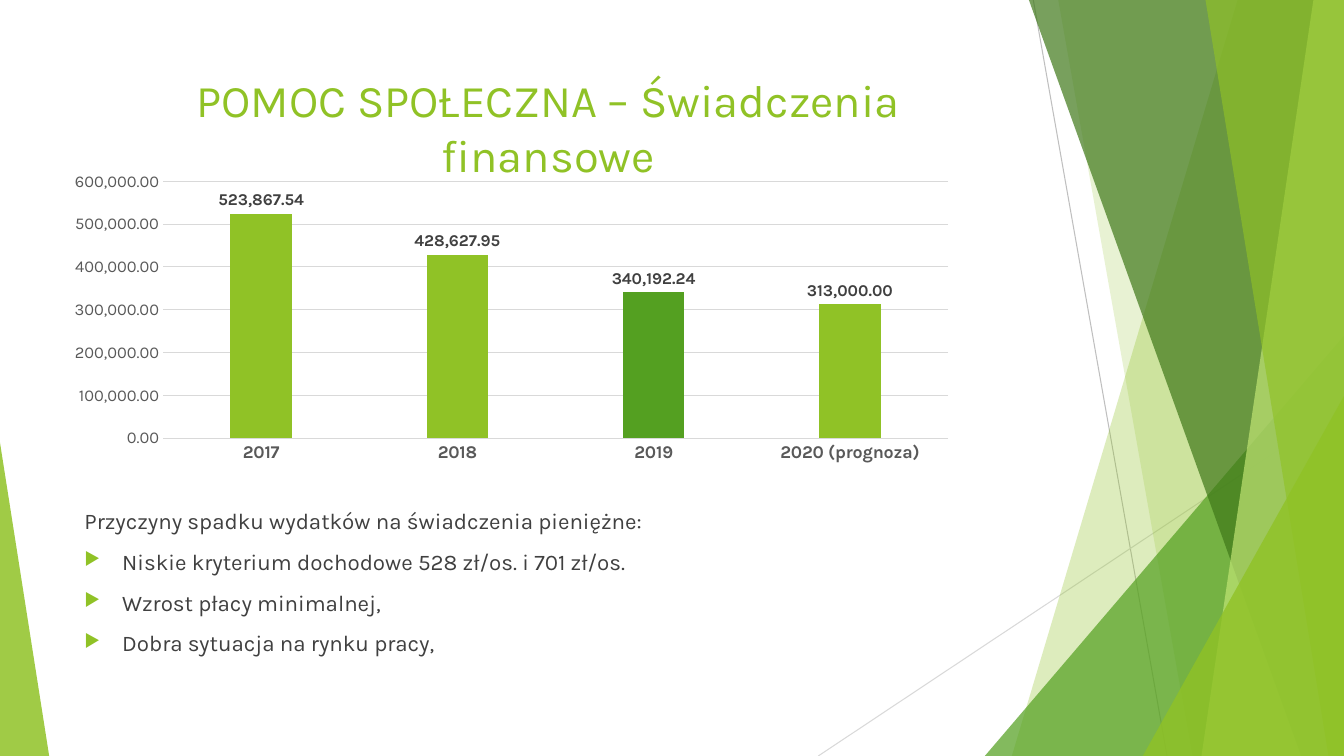
"""Build the slide on social assistance cash benefits with its column chart."""
from dataclasses import dataclass

from lxml import etree
from pptx import Presentation
from pptx import util as u
from pptx.chart import data as chart_data
from pptx.dml import color
from pptx.enum import chart as chart_enum
from pptx.enum import shapes, text
from pptx.oxml import ns, parse_xml

FONT = "Karla"
GREEN, DARK_GREEN, GRID = "90C226", "54A021", "D9D9D9"
WIDTH, HEIGHT = 33.87, 19.05


@dataclass
class Ray:
    """A thin straight line behind the facets, in centimetres."""
    start: tuple[float, float]
    end: tuple[float, float]
    tint: str


@dataclass
class Band:
    """A full-height facet reaching the right edge of the slide."""
    top_x: float
    bottom_x: float
    tint: str
    opacity: int


@dataclass
class Corner:
    """A right triangle standing on the bottom edge of the slide."""
    left: float
    top: float
    width: float
    apex: int
    tint: str
    opacity: int


RAYS = [
    Ray((26.04, 0), (29.41, HEIGHT), "BFBFBF"),
    Ray((WIDTH, 10.24), (20.62, HEIGHT), GRID),
]
FACETS = [
    Band(31.19, 25.5, GREEN, 30),
    Band(26.67, 30.05, GREEN, 20),
    Corner(24.82, 8.46, 9.05, 1, DARK_GREEN, 72),
    Band(25.93, 32.79, "3F7819", 70),
    Band(33.1, 30.28, "C0E474", 70),
    Band(30.38, 33.48, GREEN, 65),
    Corner(28.8, 9.98, 5.07, 1, GREEN, 80),
    Corner(0, 11.15, 1.24, 0, GREEN, 85),
]
TITLE = "POMOC SPOŁECZNA – Świadczenia finansowe"
INTRO = "Przyczyny spadku wydatków na świadczenia pieniężne:"
REASONS = [
    "Niskie kryterium dochodowe 528 zł/os. i 701 zł/os.",
    "Wzrost płacy minimalnej,",
    "Dobra sytuacja na rynku pracy,",
]
SPENDING = {
    "2017": 523867.54,
    "2018": 428627.95,
    "2019": 340192.24,
    "2020 (prognoza)": 313000,
}


def rgb(value: str) -> color.RGBColor:
    """Turn a hex string into a colour."""
    return color.RGBColor.from_string(value)


def style_font(font, size: float, tint: str, bold: bool = False) -> None:
    """Set the face, size, colour and weight of a font."""
    font.name, font.size, font.bold = FONT, u.Pt(size), bold
    font.color.rgb = rgb(tint)


def style_line(line, tint: str) -> None:
    """Give a line its colour and the common hairline width."""
    line.color.rgb = rgb(tint)
    line.width = u.Pt(0.75)


def draw_ray(slide, ray: Ray) -> None:
    """Draw one straight line without shadow."""
    ends = [u.Cm(value) for value in (*ray.start, *ray.end)]
    line = slide.shapes.add_connector(shapes.MSO_CONNECTOR.STRAIGHT, *ends)
    style_line(line.line, ray.tint)
    etree.SubElement(line._element.spPr, ns.qn("a:effectLst"))


def draw_facet(slide, facet: Band | Corner) -> None:
    """Draw one translucent facet."""
    if isinstance(facet, Band):
        points = [(facet.top_x, 0), (WIDTH, 0), (WIDTH, HEIGHT), (facet.bottom_x, HEIGHT)]
        corners = [(u.Cm(x), u.Cm(y)) for x, y in points]
        builder = slide.shapes.build_freeform(*corners[0])
        builder.add_line_segments(corners[1:], close=True)
        shape = builder.convert_to_shape()
    else:
        shape = slide.shapes.add_shape(
            shapes.MSO_SHAPE.ISOSCELES_TRIANGLE, u.Cm(facet.left), u.Cm(facet.top),
            u.Cm(facet.width), u.Cm(HEIGHT - facet.top))
        shape.adjustments[0] = facet.apex
    shape.shadow.inherit = False
    shape.line.fill.background()
    shape.fill.solid()
    shape.fill.fore_color.rgb = rgb(facet.tint)
    tint = shape._element.spPr.find(ns.qn("a:solidFill"))[0]
    etree.SubElement(tint, ns.qn("a:alpha"), val=str(facet.opacity * 1000))


def add_span(para, wording: str, size: float, tint: str) -> None:
    """Append one formatted run to a paragraph."""
    span = para.add_run()
    span.text = wording
    style_font(span.font, size, tint)


def add_bullet(para) -> None:
    """Give a paragraph a hanging green arrow bullet."""
    props = para._p.get_or_add_pPr()
    props.set("marL", str(u.Cm(0.95)))
    props.set("indent", str(-u.Cm(0.95)))
    tint = etree.SubElement(props, ns.qn("a:buClr"))
    etree.SubElement(tint, ns.qn("a:srgbClr"), val=GREEN)
    etree.SubElement(props, ns.qn("a:buSzPct"), val="80000")
    etree.SubElement(props, ns.qn("a:buChar"), char="▶")


def fill_title(title) -> None:
    """Place and write the slide title."""
    title.left, title.top, title.width, title.height = map(u.Cm, (1.88, 1.7, 23.88, 2.16))
    frame = title.text_frame
    frame.auto_size = text.MSO_AUTO_SIZE.NONE
    frame.word_wrap = True
    frame.vertical_anchor = text.MSO_ANCHOR.TOP
    frame.margin_left = frame.margin_right = u.Cm(0.8)
    para = frame.paragraphs[0]
    para.alignment = text.PP_ALIGN.CENTER
    add_span(para, TITLE, 32.4, GREEN)


def add_reasons(slide) -> None:
    """Write the introduction and the bulleted reasons."""
    box = slide.shapes.add_textbox(*map(u.Cm, (1.88, 12.65, 21.97, 4.7)))
    frame = box.text_frame
    frame.word_wrap = True
    for index, wording in enumerate([INTRO, *REASONS]):
        para = frame.add_paragraph() if index else frame.paragraphs[0]
        para.space_before = u.Pt(10)
        if index:
            add_bullet(para)
        add_span(para, wording, 16, "404040")


def add_spending_chart(slide) -> None:
    """Chart the yearly spending with 2019 highlighted."""
    figures = chart_data.CategoryChartData(number_format="#,##0.00")
    figures.categories = list(SPENDING)
    figures.add_series("Series 1", list(SPENDING.values()))
    chart = slide.shapes.add_chart(
        chart_enum.XL_CHART_TYPE.COLUMN_CLUSTERED,
        *map(u.Cm, (1.88, 4.32, 22.68, 7.8)), figures).chart
    chart.has_legend = chart.has_title = False
    style_font(chart.font, 10, "000000")

    plot = chart.plots[0]
    plot.gap_width, plot.overlap, plot.vary_by_categories = 219, -27, False
    series = plot.series[0]
    for fill, tint in ((series.format.fill, GREEN), (series.points[2].format.fill, DARK_GREEN)):
        fill.solid()
        fill.fore_color.rgb = rgb(tint)
    labels = series.data_labels
    labels.show_value = True
    labels.position = chart_enum.XL_LABEL_POSITION.OUTSIDE_END
    labels.number_format, labels.number_format_is_linked = "#,##0.00", False
    style_font(labels.font, 12, "404040", True)

    years, amounts = chart.category_axis, chart.value_axis
    for axis, size in ((years, 13), (amounts, 12)):
        axis.major_tick_mark = axis.minor_tick_mark = chart_enum.XL_TICK_MARK.NONE
        style_font(axis.tick_labels.font, size, "595959", axis is years)
    style_line(years.format.line, GRID)
    style_line(amounts.major_gridlines.format.line, GRID)
    amounts.format.line.fill.background()
    amounts.minimum_scale, amounts.maximum_scale, amounts.major_unit = 0, 600000, 100000
    amounts.tick_labels.number_format = "#,##0.00"
    amounts.tick_labels.number_format_is_linked = False

    area = chart._chartSpace.chart.plotArea
    for old in area.findall(ns.qn("c:layout")):
        area.remove(old)
    settings = {"layoutTarget": "inner", "xMode": "edge", "yMode": "edge",
                "x": 0.08, "y": 0.02, "w": 0.89, "h": 0.84}
    parts = "".join(f'<c:{name} val="{value}"/>' for name, value in settings.items())
    area.insert(0, parse_xml(
        f'<c:layout {ns.nsdecls("c")}><c:manualLayout>{parts}</c:manualLayout></c:layout>'))


def main() -> None:
    """Assemble and save the deck."""
    deck = Presentation()
    deck.slide_width, deck.slide_height = u.Cm(WIDTH), u.Cm(HEIGHT)
    page = deck.slides.add_slide(deck.slide_layouts[5])
    for ray in RAYS:
        draw_ray(page, ray)
    for facet in FACETS:
        draw_facet(page, facet)
    fill_title(page.shapes.title)
    add_reasons(page)
    add_spending_chart(page)
    deck.save("out.pptx")


if __name__ == "__main__":
    main()
